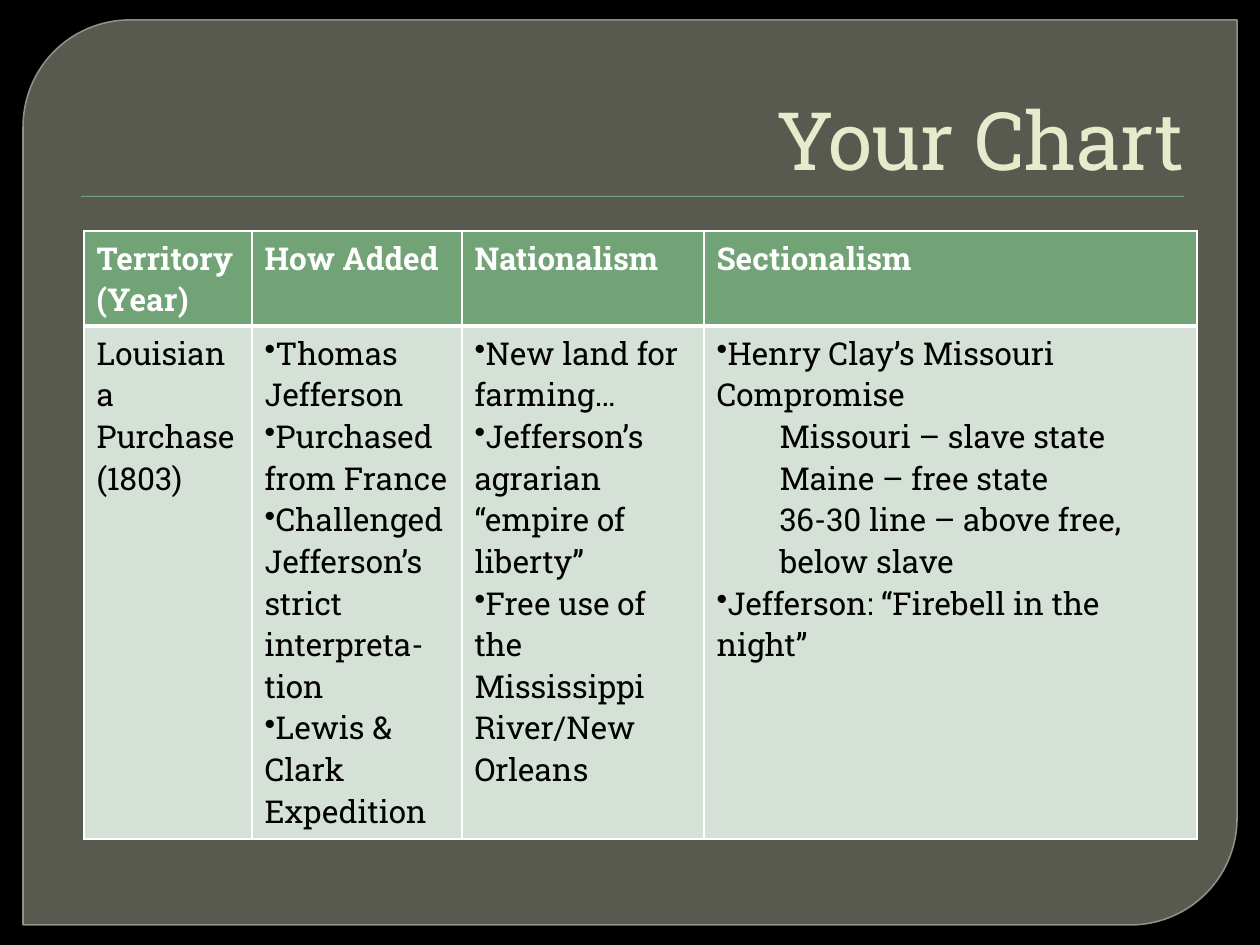
from lxml.etree import SubElement
from pptx import Presentation
from pptx.dml.color import RGBColor
from pptx.enum.shapes import MSO_SHAPE
from pptx.enum.text import MSO_ANCHOR, PP_ALIGN
from pptx.oxml.ns import qn
from pptx.util import Pt

SCALE = 914400 / 126
FONT = "Roboto Slab"
BULLET, PLAIN, INDENTED = "bullet", "plain", "indented"

COLUMN_WIDTHS = [168, 210, 242, 493]
ROW_HEIGHTS = [95, 513]
HEADINGS = ["Territory (Year)", "How Added", "Nationalism", "Sectionalism"]
DETAILS = [
    [(PLAIN, "Louisiana Purchase (1803)")],
    [
        (BULLET, "Thomas Jefferson"),
        (BULLET, "Purchased from France"),
        (BULLET, "Challenged Jefferson’s strict interpreta-tion"),
        (BULLET, "Lewis & Clark Expedition"),
    ],
    [
        (BULLET, "New land for farming…"),
        (BULLET, "Jefferson’s agrarian “empire of liberty”"),
        (BULLET, "Free use of the Mississippi River/New Orleans"),
    ],
    [
        (BULLET, "Henry Clay’s Missouri Compromise"),
        (INDENTED, "Missouri – slave state"),
        (INDENTED, "Maine – free state"),
        (INDENTED, "36-30 line – above free, below slave"),
        (BULLET, "Jefferson: “Firebell in the night”"),
    ],
]


def px(length):
    return round(length * SCALE)


def color(hex_string):
    return RGBColor.from_string(hex_string)


def fill_solid(fill, hex_string):
    fill.solid()
    fill.fore_color.rgb = color(hex_string)


def set_alpha(fill_owner, percent):
    color_element = fill_owner.find(qn("a:solidFill"))[0]
    SubElement(color_element, qn("a:alpha"), val=str(percent * 1000))


def set_font(paragraph, size, hex_string, bold=False):
    font = paragraph.font
    font.name = FONT
    font.size = Pt(size)
    font.bold = bold
    font.color.rgb = color(hex_string)


def add_panel(slide, left, top, width, height):
    panel = slide.shapes.add_shape(
        MSO_SHAPE.ROUND_2_DIAG_RECTANGLE, px(left), px(top), px(width), px(height))
    panel.shadow.inherit = False
    panel.adjustments[0] = 0.118
    panel.adjustments[1] = 0
    fill_solid(panel.fill, "888B7B")
    set_alpha(panel.element.spPr, 65)
    panel.line.width = Pt(0.87)
    panel.line.color.rgb = color("9DA090")
    set_alpha(panel.element.spPr.find(qn("a:ln")), 88)


def add_title(slide, left, top, width, height):
    title = slide.shapes.add_textbox(px(left), px(top), px(width), px(height))
    frame = title.text_frame
    frame.word_wrap = True
    frame.vertical_anchor = MSO_ANCHOR.BOTTOM
    paragraph = frame.paragraphs[0]
    paragraph.text = "Your Chart"
    paragraph.alignment = PP_ALIGN.RIGHT
    set_font(paragraph, 46, "E7EACB")

    rule = slide.shapes.add_shape(
        MSO_SHAPE.RECTANGLE, px(left + 18), px(top + 161), px(width - 31), px(1))
    rule.shadow.inherit = False
    fill_solid(rule.fill, "72A376")
    rule.line.fill.background()


def set_borders(cell, top, bottom):
    properties = cell._tc.get_or_add_tcPr()
    for side, width in (("L", 1), ("R", 1), ("T", top), ("B", bottom)):
        line = SubElement(properties, qn(f"a:ln{side}"), w=str(Pt(width)))
        fill = SubElement(line, qn("a:solidFill"))
        SubElement(fill, qn("a:srgbClr"), val="FFFFFF")


def fill_cell(cell, items, fill, text_color, bold, top, bottom):
    set_borders(cell, top, bottom)
    fill_solid(cell.fill, fill)
    frame = cell.text_frame
    for index, (style, text) in enumerate(items):
        paragraph = frame.add_paragraph() if index else frame.paragraphs[0]
        paragraph.text = text
        properties = paragraph._p.get_or_add_pPr()
        if style == BULLET:
            SubElement(properties, qn("a:buChar"), char="•")
        elif style == INDENTED:
            paragraph.level = 1
            properties.set("marL", str(px(63)))
        set_font(paragraph, 18, text_color, bold)


def add_territory_table(slide, left, top):
    table = slide.shapes.add_table(
        len(ROW_HEIGHTS), len(COLUMN_WIDTHS), px(left), px(top),
        px(sum(COLUMN_WIDTHS)), px(sum(ROW_HEIGHTS))).table
    for row, height in zip(table.rows, ROW_HEIGHTS):
        row.height = px(height)
    for index, width in enumerate(COLUMN_WIDTHS):
        table.columns[index].width = px(width)
        fill_cell(table.cell(0, index), [(PLAIN, HEADINGS[index])],
                  "72A376", "FFFFFF", True, 1, 3)
        fill_cell(table.cell(1, index), DETAILS[index],
                  "D5E0D6", "000000", False, 3, 1)


def main():
    presentation = Presentation()
    presentation.slide_width = px(1260)
    presentation.slide_height = px(945)
    slide = presentation.slides.add_slide(presentation.slide_layouts[6])
    fill_solid(slide.background.fill, "000000")
    add_panel(slide, 23, 20, 1214, 905)
    add_title(slide, 63, 35, 1134, 158)
    add_territory_table(slide, 84, 231)
    presentation.save("out.pptx")


if __name__ == "__main__":
    main()
